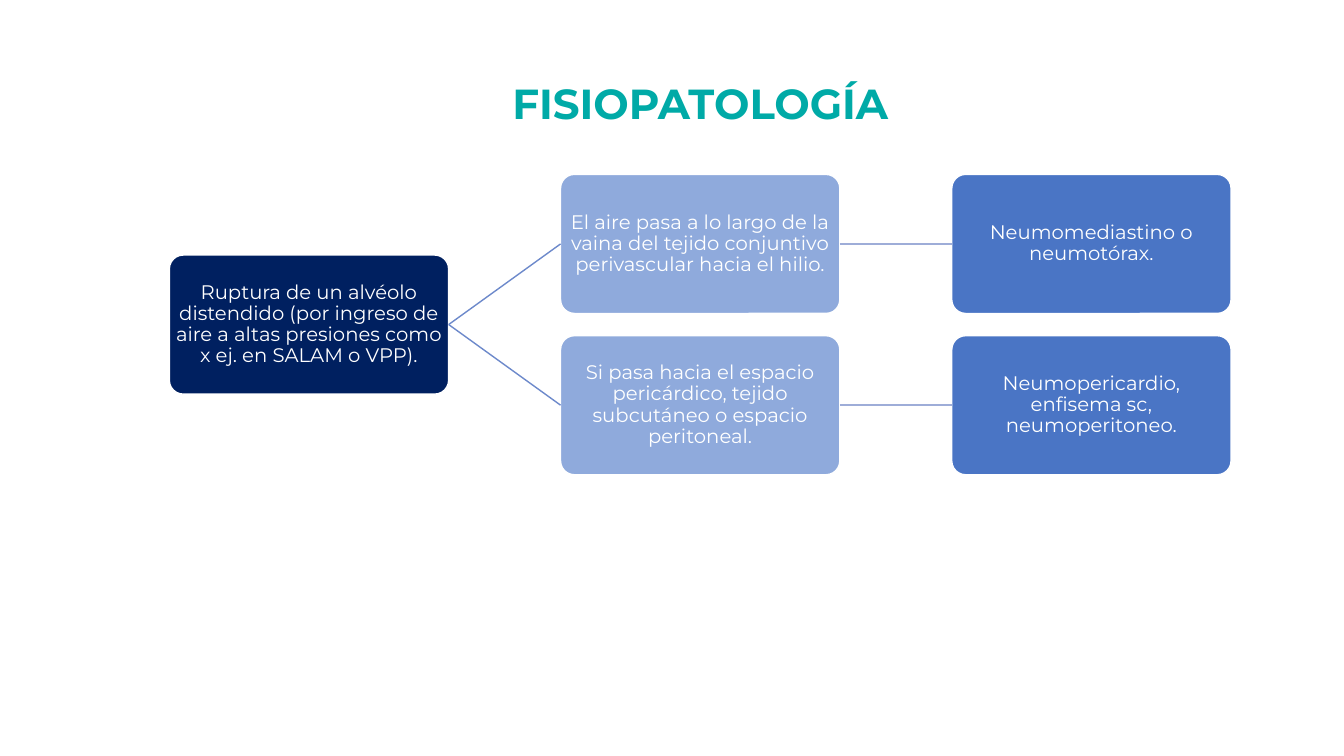
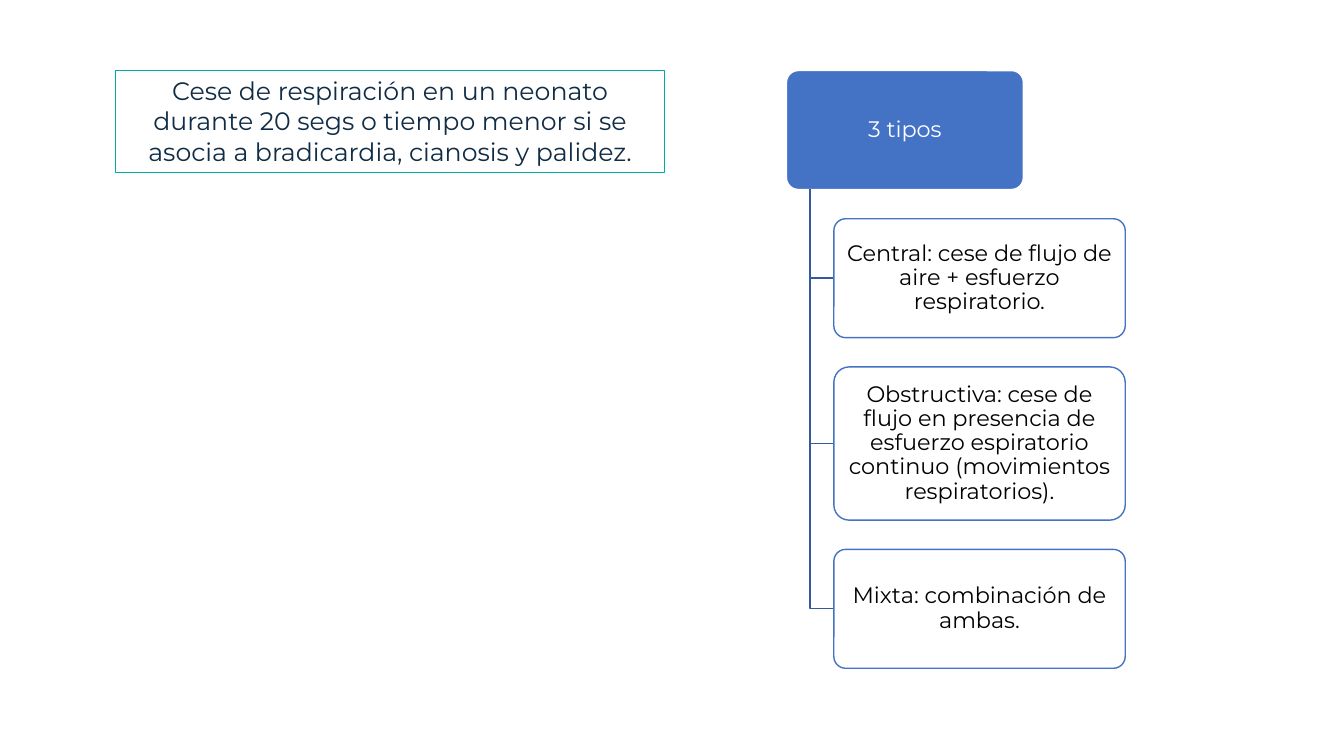
from lxml import etree
from pptx import Presentation
from pptx.dml.color import RGBColor
from pptx.enum import shapes, text
from pptx.oxml import ns
from pptx.util import Inches, Pt

FONT = "Montserrat"
TEAL, NAVY, INK = "00AAA7", "002060", "112C45"
LIGHT_BLUE, MID_BLUE, BLUE, TRUNK_BLUE = "8FAADC", "4A75C5", "4472C4", "365B9D"
FORK_BLUE, LINK_BLUE = "6D89CB", "9EADD8"
WHITE, BLACK = "FFFFFF", "000000"

TITLE = "FISIOPATOLOGÍA"
CAUSE = "Ruptura de un alvéolo distendido (por ingreso de aire a altas presiones como x ej. en SALAM o VPP)."
PATHWAYS = [
    ("El aire pasa a lo largo de la vaina del tejido conjuntivo perivascular hacia el hilio.",
     "Neumomediastino o neumotórax."),
    ("Si pasa hacia el espacio pericárdico, tejido subcutáneo o espacio peritoneal.",
     "Neumopericardio, enfisema sc, neumoperitoneo."),
]
DEFINITION = ("Cese de respiración en un neonato durante 20 segs o tiempo menor "
              "si se asocia a bradicardia, cianosis y palidez.")
TYPES_HEADING = "3 tipos"
TYPES = [
    ("Central: cese de flujo de aire + esfuerzo respiratorio.", 1.18),
    ("Obstructiva: cese de flujo en presencia de esfuerzo espiratorio continuo "
     "(movimientos respiratorios).", 1.52),
    ("Mixta: combinación de ambas.", 1.18),
]


def color(value):
    return RGBColor.from_string(value)


def write(box, words, size, ink, bold=False, spacing=None):
    frame = box.text_frame
    frame.word_wrap = True
    para = frame.paragraphs[0]
    para.alignment = text.PP_ALIGN.CENTER
    if spacing:
        para.line_spacing = spacing
    span = para.add_run()
    span.text = words
    span.font.name, span.font.size, span.font.bold = FONT, Pt(size), bold
    span.font.color.rgb = color(ink)


def add_node(page, words, left, top, width, height, fill, size,
             line=WHITE, ink=WHITE, inset=0.01):
    box = page.shapes.add_shape(shapes.MSO_SHAPE.ROUNDED_RECTANGLE,
                                Inches(left), Inches(top), Inches(width), Inches(height))
    box.adjustments[0] = 0.1
    box.shadow.inherit = False
    box.fill.solid()
    box.fill.fore_color.rgb = color(fill)
    box.line.color.rgb = color(line)
    box.line.width = Pt(1)
    frame = box.text_frame
    frame.margin_left = frame.margin_right = Inches(inset)
    frame.margin_top = frame.margin_bottom = Inches(0.01)
    frame.vertical_anchor = text.MSO_ANCHOR.MIDDLE
    write(box, words, size, ink, spacing=0.9)
    return box


def join(page, start, end, ink):
    link = page.shapes.add_connector(shapes.MSO_CONNECTOR.STRAIGHT, 0, 0, 0, 0)
    link.begin_connect(start, 3)
    link.end_connect(end, 1)
    link.line.color.rgb = color(ink)
    link.line.width = Pt(1)
    etree.SubElement(link._element.spPr, ns.qn("a:effectLst"))


def add_elbow(page, x, top, end_x, end_y):
    builder = page.shapes.build_freeform(Inches(x), Inches(top))
    builder.add_line_segments([(Inches(x), Inches(end_y)), (Inches(end_x), Inches(end_y))],
                              close=False)
    elbow = builder.convert_to_shape()
    elbow.shadow.inherit = False
    elbow.fill.background()
    elbow.line.color.rgb = color(TRUNK_BLUE)
    elbow.line.width = Pt(1)


def build_pathology(page):
    left, top, width, height = 1.68, 1.73, 2.77, 1.38
    column_step, row_step = 3.88, 1.6

    def node(words, column, row, fill):
        return add_node(page, words, left + column * column_step, top + row * row_step,
                        width, height, fill, 14)

    cause = node(CAUSE, 0, (len(PATHWAYS) - 1) / 2, NAVY)
    for row, (route, outcome) in enumerate(PATHWAYS):
        route_box = node(route, 1, row, LIGHT_BLUE)
        outcome_box = node(outcome, 2, row, MID_BLUE)
        join(page, cause, route_box, FORK_BLUE)
        join(page, route_box, outcome_box, LINK_BLUE)
    title = page.shapes.add_textbox(Inches(4.32), Inches(0.72), Inches(5.25), Inches(0.61))
    write(title, TITLE, 30, TEAL, bold=True)


def build_apnea(page):
    definition = page.shapes.add_shape(shapes.MSO_SHAPE.RECTANGLE, Inches(1.15), Inches(0.7),
                                       Inches(5.44), Inches(1.01))
    definition.shadow.inherit = False
    definition.fill.background()
    definition.line.color.rgb = color(TEAL)
    definition.line.width = Pt(0.75)
    definition.text_frame.vertical_anchor = text.MSO_ANCHOR.TOP
    write(definition, DEFINITION, 18, INK)

    left, top, width, height, gap = 7.8, 0.7, 2.35, 1.18, 0.29
    trunk_x, type_left, type_width = left + width / 10, left + width / 5, 2.89
    add_node(page, TYPES_HEADING, left, top, width, height, BLUE, 16, inset=0.03)
    trunk_top = top + height
    type_top = trunk_top + gap
    for words, type_height in TYPES:
        add_elbow(page, trunk_x, trunk_top, type_left, type_top + type_height / 2)
        add_node(page, words, type_left, type_top, type_width, type_height, WHITE, 16,
                 line=BLUE, ink=BLACK, inset=0.03)
        type_top += type_height + gap


def main():
    deck = Presentation()
    deck.slide_width, deck.slide_height = Inches(13.33), Inches(7.5)
    for build in (build_pathology, build_apnea):
        build(deck.slides.add_slide(deck.slide_layouts[6]))
    deck.save("out.pptx")


if __name__ == "__main__":
    main()
